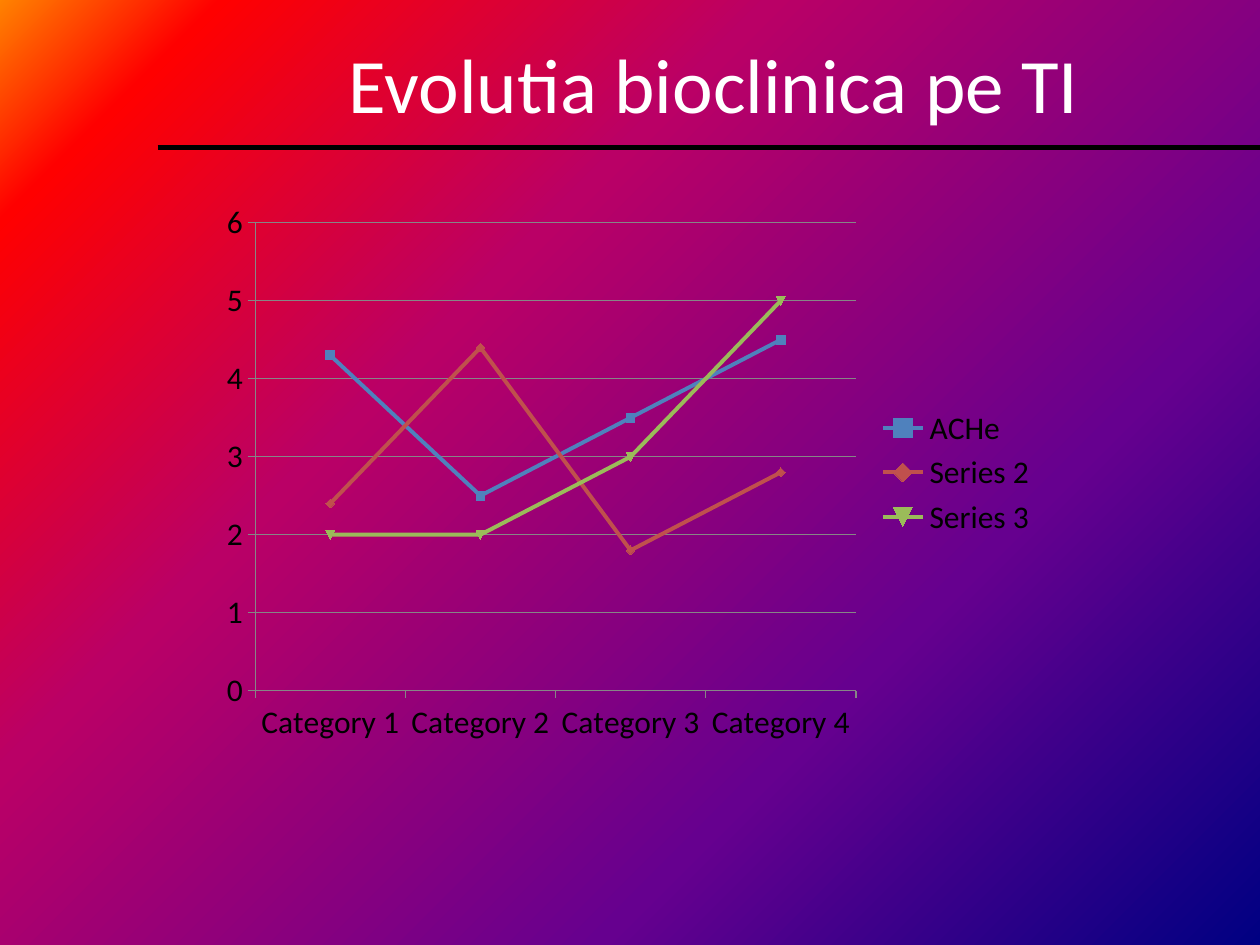
from lxml import etree
from pptx import Presentation
from pptx import oxml
from pptx.chart import data
from pptx.dml import color
from pptx.enum import chart as kinds, shapes, text
from pptx.oxml import ns
from pptx.util import Pt


def rgb(value):
    return color.RGBColor.from_string(value)


deck = Presentation()
deck.slide_width, deck.slide_height = Pt(720), Pt(540)
page = deck.slides.add_slide(deck.slide_layouts[5])

stops = [(0, "000082"), (30, "66008F"), (65, "BA0066"), (90, "FF0000"), (100, "FF8200")]
stop_xml = "".join(
    f'<a:gs pos="{place * 1000}"><a:srgbClr val="{value}"/></a:gs>' for place, value in stops
)
page.background.fill.gradient()
gradient = page.element.xpath(".//p:bgPr/a:gradFill")[0]
gradient.getparent().replace(gradient, oxml.parse_xml(
    f'<a:gradFill {ns.nsdecls("a")} rotWithShape="1"><a:gsLst>{stop_xml}</a:gsLst>'
    '<a:path path="circle"><a:fillToRect l="100000" t="100000"/></a:path></a:gradFill>'
))

title = page.shapes.title
title.left, title.top, title.width, title.height = Pt(96), Pt(16.5), Pt(624), Pt(62)
title.text_frame.text = "Evolutia bioclinica pe TI"
title.text_frame.vertical_anchor = text.MSO_ANCHOR.MIDDLE
para = title.text_frame.paragraphs[0]
para.alignment = text.PP_ALIGN.CENTER
para.font.name, para.font.size = "Calibri", Pt(44)
para.font.color.rgb = rgb("FFFFFF")

rule = page.shapes.add_connector(shapes.MSO_CONNECTOR.STRAIGHT, Pt(90), Pt(84.3), Pt(720), Pt(84.3))
rule.line.color.rgb = rgb("000000")
rule.line.width = Pt(3)
etree.SubElement(rule.element.spPr, ns.qn("a:effectLst"))

chart_data = data.CategoryChartData()
chart_data.categories = [f"Category {number}" for number in range(1, 5)]
series_rows = [
    ("ACHe", (4.3, 2.5, 3.5, 4.5), "4F81BD"),
    ("Series 2", (2.4, 4.4, 1.8, 2.8), "C0504D"),
    ("Series 3", (2, 2, 3, 5), "9BBB59"),
]
for name, values, _ in series_rows:
    chart_data.add_series(name, values)
chart = page.shapes.add_chart(
    kinds.XL_CHART_TYPE.LINE_MARKERS, Pt(120), Pt(110), Pt(480), Pt(320), chart_data
).chart
chart.has_title = False
chart.font.name, chart.font.size = "Calibri", Pt(18)
chart.font.color.rgb = rgb("000000")
chart.has_legend = True
chart.legend.position = kinds.XL_LEGEND_POSITION.RIGHT
chart.legend.include_in_layout = False

plot = chart.plots[0]
plot.vary_by_categories = False
for series, (_, _, value) in zip(plot.series, series_rows):
    series.smooth = False
    series.format.line.color.rgb = rgb(value)
    series.format.line.width = Pt(2.25)
    series.marker.format.fill.solid()
    series.marker.format.fill.fore_color.rgb = rgb(value)
    series.marker.format.line.color.rgb = rgb(value)

value_axis = chart.value_axis
value_axis.minimum_scale, value_axis.maximum_scale, value_axis.major_unit = 0, 6, 1
value_axis.has_major_gridlines = True
for axis in (chart.category_axis, value_axis):
    axis.major_tick_mark = kinds.XL_TICK_MARK.OUTSIDE
for part in (chart.category_axis, value_axis, value_axis.major_gridlines):
    part.format.line.color.rgb = rgb("868686")
    part.format.line.width = Pt(0.75)

deck.save("out.pptx")
